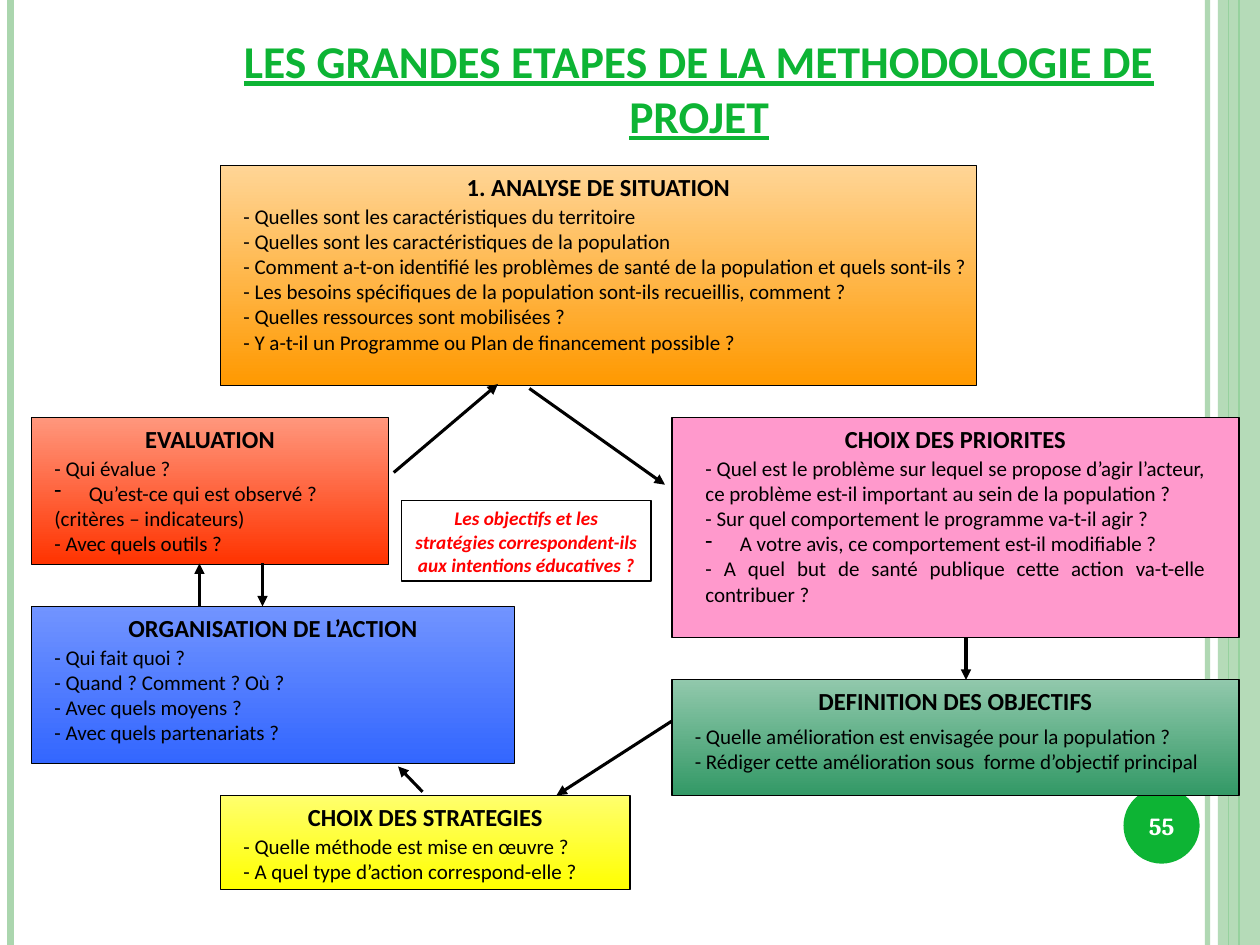
from lxml import etree
from pptx import Presentation
from pptx.dml.color import RGBColor
from pptx.enum import shapes, text
from pptx.oxml.ns import qn
from pptx.util import Pt

COLORS = {
    "green": "0DB434", "pale": "ABD6AE", "black": "000000", "white": "FFFFFF",
    "red": "FF0000", "pink": "FF99CC",
    "orange": ("FFD596", "FF9900"), "coral": ("FF977D", "FF3300"),
    "teal": ("91C8AC", "339966"), "yellow": ("FFFF6D", "FFFF00"),
    "blue": ("7194FF", "3366FF"),
}
HEADING = {"name": "Calibri", "size": Pt(14), "bold": True}
BODY = {"name": "Calibri", "size": Pt(12)}
LEFT, CENTER = text.PP_ALIGN.LEFT, text.PP_ALIGN.CENTER
JUSTIFY = text.PP_ALIGN.JUSTIFY
BULLET = "• "  # marks a line whose dash hangs in the margin

# Box: left, top, width, height, fill, heading; body: left, top, width, height, alignment, lines
STEPS = [
    ((126, 94.5, 432, 126), "orange", "1. ANALYSE DE SITUATION",
     (132, 112.5, 438, 137), JUSTIFY, [
         "- Quelles sont les caractéristiques du territoire",
         "- Quelles sont les caractéristiques de la population",
         "- Comment a-t-on identifié les problèmes de santé de la population et quels sont-ils ?",
         "- Les besoins spécifiques de la population sont-ils recueillis, comment ?",
         "- Quelles ressources sont mobilisées ?",
         "- Y a-t-il un Programme ou Plan de financement possible ?"]),
    ((384, 238.5, 324, 126), "pink", "CHOIX DES PRIORITES",
     (396, 256.5, 300, 108), JUSTIFY, [
         "- Quel est le problème sur lequel se propose d’agir l’acteur, "
         "ce problème est-il important au sein de la population ?",
         "- Sur quel comportement le programme va-t-il agir ?",
         BULLET + " A votre avis, ce comportement est-il modifiable ?",
         "- A quel but de santé publique cette action va-t-elle contribuer ?"]),
    ((18, 238.5, 204, 84), "coral", "EVALUATION",
     (24, 256.5, 186, 65), LEFT, [
         "- Qui évalue ?",
         BULLET + " Qu’est-ce qui est observé ?",
         "(critères – indicateurs)",
         "- Avec quels outils ?"]),
    ((384, 388.5, 324, 66), "teal", "DEFINITION DES OBJECTIFS",
     (390, 410, 318, 36), LEFT, [
         "- Quelle amélioration est envisagée pour la population ?",
         "- Rédiger cette amélioration sous  forme d’objectif principal"]),
    ((126, 454.5, 234, 54), "yellow", "CHOIX DES STRATEGIES",
     (132, 472.5, 233, 36), LEFT, [
         "- Quelle méthode est mise en œuvre ?",
         "- A quel type d’action correspond-elle ?"]),
    ((18, 346.5, 276, 90), "blue", "ORGANISATION DE L’ACTION",
     (24, 364.5, 264, 108), LEFT, [
         "- Qui fait quoi ?",
         "- Quand ? Comment ? Où ?",
         "- Avec quels moyens ?",
         "- Avec quels partenariats ?"]),
]
ARROWS = [
    (114, 346.5, 114, 322), (225, 270, 284.5, 219.5), (302.5, 222, 380, 277),
    (552, 364.5, 552, 388.5), (241.5, 452.5, 227.5, 438),
    (384, 412, 318, 454.5), (150, 322, 150, 346.5),
]
# Vertical bands: x, width, colour, opacity in percent
BANDS = [(690, 3, "pale", 93), (6, 4.5, "pale", 100),
         (708, 1.5, "green", 100), (702, 0.75, "green", 100)]


def rgb(name):
    return RGBColor.from_string(COLORS[name])


def points(values):
    return [Pt(value) for value in values]


def set_opacity(fill_parent, percent):
    color = next(fill_parent.iter(qn("a:srgbClr")))
    etree.SubElement(color, qn("a:alpha")).set("val", str(percent * 1000))


def write(para, words, font, color, align):
    para.alignment = align
    if words.startswith(BULLET):
        words = words[len(BULLET):]
        props = para._p.get_or_add_pPr()
        props.set("marL", str(Pt(17)))
        props.set("indent", str(-Pt(17)))
        etree.SubElement(props, qn("a:buChar")).set("char", "-")
    span = para.add_run()
    span.text = words
    for key, value in font.items():
        setattr(span.font, key, value)
    span.font.color.rgb = rgb(color)


def add_line(slide, ends, width, color):
    line = slide.shapes.add_connector(shapes.MSO_CONNECTOR.STRAIGHT, *points(ends))
    line.line.width = Pt(width)
    line.line.color.rgb = rgb(color)
    etree.SubElement(line._element.spPr, qn("a:effectLst"))
    return line


def add_arrow(slide, ends):
    arrow = add_line(slide, ends, 1.75, "black")
    etree.SubElement(arrow.line._get_or_add_ln(), qn("a:tailEnd")).set("type", "triangle")


def add_box(slide, place, fill, kind=shapes.MSO_SHAPE.RECTANGLE, outlined=True):
    """Add a filled shape; a pair of colours gives a top-to-bottom gradient."""
    box = slide.shapes.add_shape(kind, *points(place))
    box.shadow.inherit = False
    if isinstance(COLORS[fill], tuple):
        box.fill.gradient()
        box.fill.gradient_angle = 270
        for stop, color in zip(box.fill.gradient_stops, COLORS[fill]):
            stop.color.rgb = RGBColor.from_string(color)
    else:
        box.fill.solid()
        box.fill.fore_color.rgb = rgb(fill)
    if outlined:
        box.line.color.rgb = rgb("black")
        box.line.width = Pt(0.75)
    else:
        box.line.fill.background()
    box.text_frame.word_wrap = True
    box.text_frame.vertical_anchor = text.MSO_ANCHOR.TOP
    return box


def add_body(slide, place, align, lines):
    frame = slide.shapes.add_textbox(*points(place)).text_frame
    frame.word_wrap = True
    for index, words in enumerate(lines):
        para = frame.add_paragraph() if index else frame.paragraphs[0]
        write(para, words, BODY, "black", align)


def add_frame(slide):
    """Draw the side bands and the page number."""
    for x, width, color, opacity in BANDS:
        band = add_line(slide, (x, 0, x, 540), width, color)
        if opacity < 100:
            set_opacity(band._element.spPr, opacity)
    strip = add_box(slide, (696, 0, 24, 540), "pale", outlined=False)
    set_opacity(strip._element.spPr, 87)
    disc = add_box(slide, (642, 450, 43.5, 43.5), "green",
                   shapes.MSO_SHAPE.OVAL, outlined=False)
    disc.text_frame.vertical_anchor = text.MSO_ANCHOR.MIDDLE
    write(disc.text_frame.paragraphs[0], "55", HEADING | {"name": "Cambria"}, "white", CENTER)


def set_title(slide, words):
    title = slide.shapes.title
    title.left, title.top, title.width, title.height = points((93.5, 49, 612, 36))
    frame = title.text_frame
    frame.word_wrap = True
    frame.auto_size = text.MSO_AUTO_SIZE.NONE
    frame.vertical_anchor = text.MSO_ANCHOR.BOTTOM
    write(frame.paragraphs[0], words,
          HEADING | {"size": Pt(26), "underline": True}, "green", CENTER)


def main():
    deck = Presentation()
    deck.slide_width, deck.slide_height = points((720, 540))
    slide = deck.slides.add_slide(deck.slide_layouts[5])
    add_frame(slide)
    set_title(slide, "LES GRANDES ETAPES DE LA METHODOLOGIE DE PROJET")
    for place, fill, heading, *_ in STEPS:
        box = add_box(slide, place, fill)
        write(box.text_frame.paragraphs[0], heading, HEADING, "black", CENTER)
    question = add_box(slide, (229.5, 286, 142.5, 46), "white")
    write(question.text_frame.paragraphs[0],
          "Les objectifs et les stratégies correspondent-ils aux intentions éducatives ?",
          HEADING | {"size": Pt(11), "italic": True}, "red", CENTER)
    for ends in ARROWS:
        add_arrow(slide, ends)
    for *_, place, align, lines in STEPS:
        add_body(slide, place, align, lines)
    deck.save("out.pptx")


if __name__ == "__main__":
    main()
